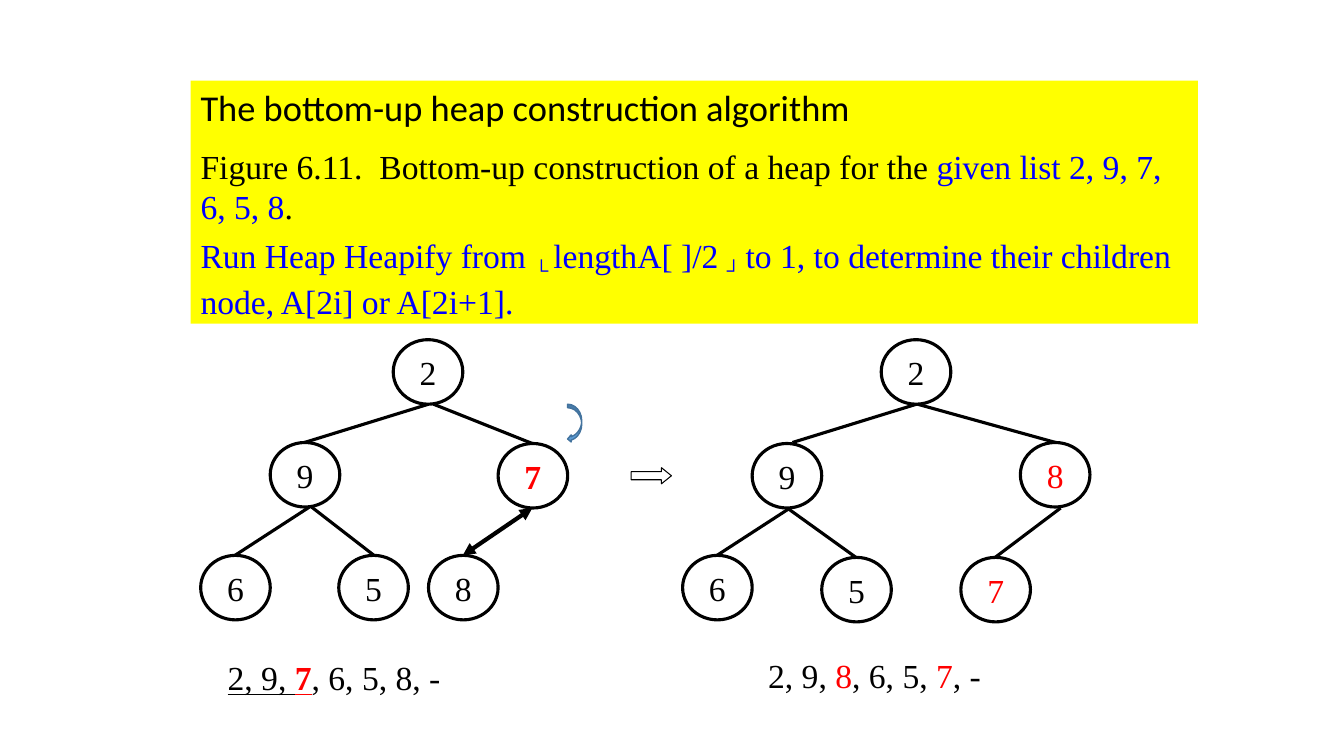
import pptx
import pptx.util
import pptx.dml.color
import pptx.enum.shapes
import pptx.enum.text
import pptx.oxml.ns
import lxml.etree

PX = 9144
BLACK, WHITE, RED, BLUE = "000000", "FFFFFF", "FF0000", "0000FF"
SERIF = "Times New Roman"
Kind = pptx.enum.shapes.MSO_SHAPE


def hue(code):
    return pptx.dml.color.RGBColor.from_string(code)


def draw(kind, box, fill, line=None, width=0):
    shape = slide.shapes.add_shape(kind, *[n * PX for n in box])
    shape.shadow.inherit = False
    shape.fill.solid()
    shape.fill.fore_color.rgb = hue(fill)
    if line:
        shape.line.color.rgb = hue(line)
        shape.line.width = pptx.util.Pt(width)
    else:
        shape.line.fill.background()
    return shape


deck = pptx.Presentation()
deck.slide_width = 1333 * PX
deck.slide_height = 750 * PX
slide = deck.slides.add_slide(deck.slide_layouts[6])

panel = draw(Kind.RECTANGLE, (189, 80, 999, 241), "FFFF00")
frame = panel.text_frame
frame.word_wrap = True
frame.vertical_anchor = pptx.enum.text.MSO_ANCHOR.TOP
paras = [
    ("Calibri", 26, 12, [("The bottom-up heap construction algorithm", BLACK, False)]),
    (SERIF, 24, 6, [
        ("Figure 6.11.  Bottom-up construction of a heap for the ", BLACK, False),
        ("given list 2, 9, 7, 6, 5, 8", BLUE, False),
        (".", BLACK, False),
    ]),
    (SERIF, 24, 6, [
        ("Run Heap Heapify from ", BLUE, False),
        ("└ ", BLUE, True),
        ("lengthA[ ]/2 ", BLUE, False),
        ("┘ ", BLUE, True),
        ("to 1, to determine their children node, A[2i] or A[2i+1].", BLUE, False),
    ]),
]
for i, (face, size, gap, runs) in enumerate(paras):
    para = frame.paragraphs[0] if i == 0 else frame.add_paragraph()
    para.alignment = pptx.enum.text.PP_ALIGN.LEFT
    para.space_after = pptx.util.Pt(gap)
    para.font.name = face
    para.font.size = pptx.util.Pt(size)
    for text, code, low in runs:
        run = para.add_run()
        run.text = text
        run.font.color.rgb = hue(code)
        if low:
            run.font.italic = True
            run.font._element.set("baseline", "-25000")

edges = [
    (425, 401, 302, 439), (307, 503, 233, 551), (309, 503, 371, 551),
    (430, 401, 528, 440), (528, 504, 459, 551),
    (909, 401, 786, 439), (910, 401, 1047, 439), (778, 502, 849, 553),
    (782, 505, 708, 553), (1052, 504, 987, 553),
]
swap = edges[4]
for edge in edges:
    link = slide.shapes.add_connector(
        pptx.enum.shapes.MSO_CONNECTOR.STRAIGHT, *[n * PX for n in edge])
    link.line.color.rgb = hue(BLACK)
    link.line.width = pptx.util.Pt(3 if edge == swap else 2.25)
    if edge == swap:
        for end in ("headEnd", "tailEnd"):
            tip = lxml.etree.SubElement(link.line._get_or_add_ln(), pptx.oxml.ns.qn("a:" + end))
            tip.set("type", "triangle")
    lxml.etree.SubElement(link._element.spPr, pptx.oxml.ns.qn("a:effectLst"))

nodes = [
    ("2", 390, 337, BLACK), ("9", 268, 439, BLACK), ("7", 494, 440, RED),
    ("6", 199, 551, BLACK), ("5", 336, 551, BLACK), ("8", 425, 551, BLACK),
    ("2", 874, 337, BLACK), ("9", 746, 440, BLACK), ("8", 1012, 439, RED),
    ("6", 677, 551, BLACK), ("5", 815, 553, BLACK), ("7", 953, 553, RED),
]
for i, (text, x, y, code) in enumerate(nodes):
    node = draw(Kind.OVAL, (x, y, 69, 64), WHITE, BLACK, 2.25)
    node.text_frame.text = text
    para = node.text_frame.paragraphs[0]
    para.alignment = pptx.enum.text.PP_ALIGN.CENTER
    para.font.name = SERIF
    para.font.size = pptx.util.Pt(24)
    para.font.bold = i == 2
    para.font.color.rgb = hue(code)

arrow = draw(Kind.RIGHT_ARROW, (626, 464, 40, 16), WHITE, BLACK, 0.75)
arrow.adjustments[1] = 0.62
draw(Kind.CURVED_LEFT_ARROW, (563, 401, 14, 38), "5B9BD5", "43739E", 1)

lists = [
    (216, 647, 243, [("2, 9, ", BLACK, False, True), ("7", RED, True, True),
                     (", 6, 5, 8, -", BLACK, False, False)]),
    (752, 645, 261, [("2, 9, ", BLACK, False, False), ("8", RED, False, False),
                     (", 6, 5, ", BLACK, False, False), ("7", RED, False, False),
                     (", -", BLACK, False, False)]),
]
for x, y, wide, runs in lists:
    label = slide.shapes.add_textbox(x * PX, y * PX, wide * PX, 50 * PX)
    label.text_frame.word_wrap = True
    para = label.text_frame.paragraphs[0]
    para.font.name = SERIF
    para.font.size = pptx.util.Pt(24)
    for text, code, bold, under in runs:
        run = para.add_run()
        run.text = text
        run.font.color.rgb = hue(code)
        run.font.bold = bold
        run.font.underline = under

deck.save("out.pptx")
